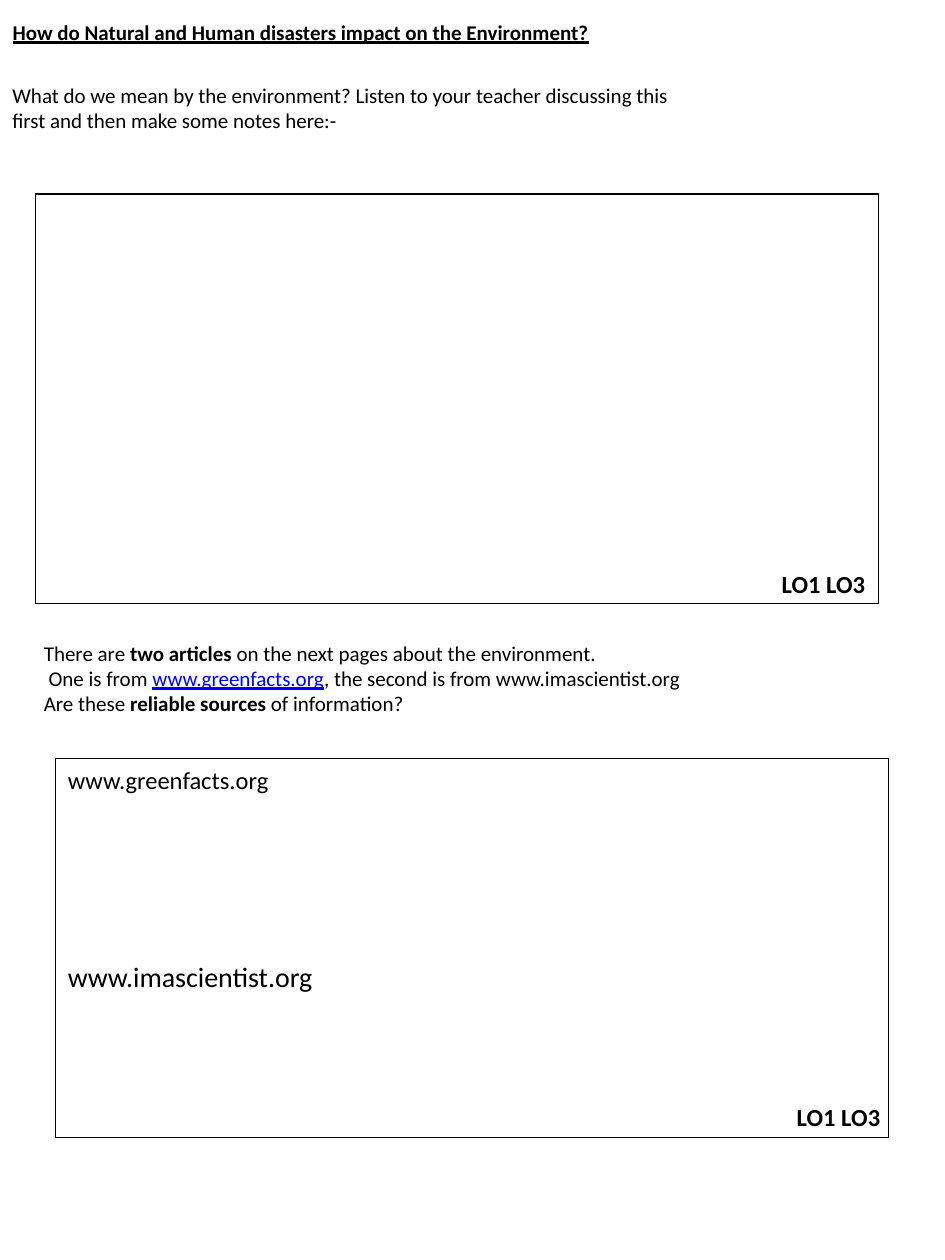
"""Build a worksheet page on disasters and the environment."""
from pptx import Presentation
from pptx.dml.color import RGBColor
from pptx.enum import shapes, text
from pptx.util import Pt


def tint(code):
    return RGBColor.from_string(code)


def write(shape, lines, size=12, bold=False, line=False, align="LEFT", sizes=None, gap=0, dent=None):
    frame = shape.text_frame
    frame.word_wrap = False
    frame.auto_size = text.MSO_AUTO_SIZE.NONE
    frame.vertical_anchor = text.MSO_ANCHOR.TOP
    frame.margin_left = frame.margin_right = Pt(7.2)
    frame.margin_top = frame.margin_bottom = Pt(3.6)
    for row, runs in enumerate(lines):
        para = frame.add_paragraph() if row else frame.paragraphs[0]
        para.alignment = getattr(text.PP_ALIGN, align)
        if row and gap:
            para.space_before = Pt(gap)
        if row == dent:
            para._p.get_or_add_pPr().set("marL", str(Pt(2.7)))
        for part in [runs] if isinstance(runs, str) else runs:
            words, look = (part, {}) if isinstance(part, str) else part
            run = para.add_run()
            run.text = words
            font = run.font
            font.name = "Calibri"
            font.size = Pt(sizes[row] if sizes else size)
            font.bold = look.get("bold", bold)
            font.underline = look.get("line", line)
            font.color.rgb = tint(look.get("color", "000000"))


deck = Presentation()
deck.slide_width, deck.slide_height = Pt(540), Pt(720)
page = deck.slides.add_slide(deck.slide_layouts[5])

panels = []
for x, y, w, h in [(20.16, 110.88, 481.68, 234), (31.68, 433.44, 475.92, 216.72)]:
    panel = page.shapes.add_shape(shapes.MSO_SHAPE.RECTANGLE, Pt(x), Pt(y), Pt(w), Pt(h))
    panel.shadow.inherit = False
    panel.fill.solid()
    panel.fill.fore_color.rgb = tint("FFFFFF")
    panel.line.color.rgb = tint("000000")
    panel.line.width = Pt(0.75)
    panels.append(panel)
write(panels[1], ["www.greenfacts.org", "www.imascientist.org"], sizes=[14, 16], gap=94.4)

title = page.shapes.title
title.left, title.top, title.width, title.height = Pt(0), Pt(7.4), Pt(393), Pt(22)
write(title, ["How do Natural and Human disasters impact on the Environment?"], bold=True, line=True)

task = page.shapes.add_textbox(Pt(0), Pt(43.4), Pt(393), Pt(37))
write(task, [
    "What do we mean by the environment? Listen to your teacher discussing this",
    "first and then make some notes here:-",
])

intro = page.shapes.add_textbox(Pt(18), Pt(362.2), Pt(382), Pt(52))
write(intro, [
    ["There are ", ("two articles", {"bold": True}), " on the next pages about the environment."],
    ["One is from ", ("www.greenfacts.org", {"color": "0000FF", "line": True}),
     ", the second is from www.imascientist.org"],
    ["Are these ", ("reliable sources", {"bold": True}), " of information?"],
], dent=1)

for x, y in [(439.2, 321.84), (447.84, 626.4)]:
    label = page.shapes.add_textbox(Pt(x), Pt(y), Pt(62.64), Pt(24.48))
    write(label, ["LO1 LO3"], size=14, bold=True, align="CENTER")

deck.save("out.pptx")
